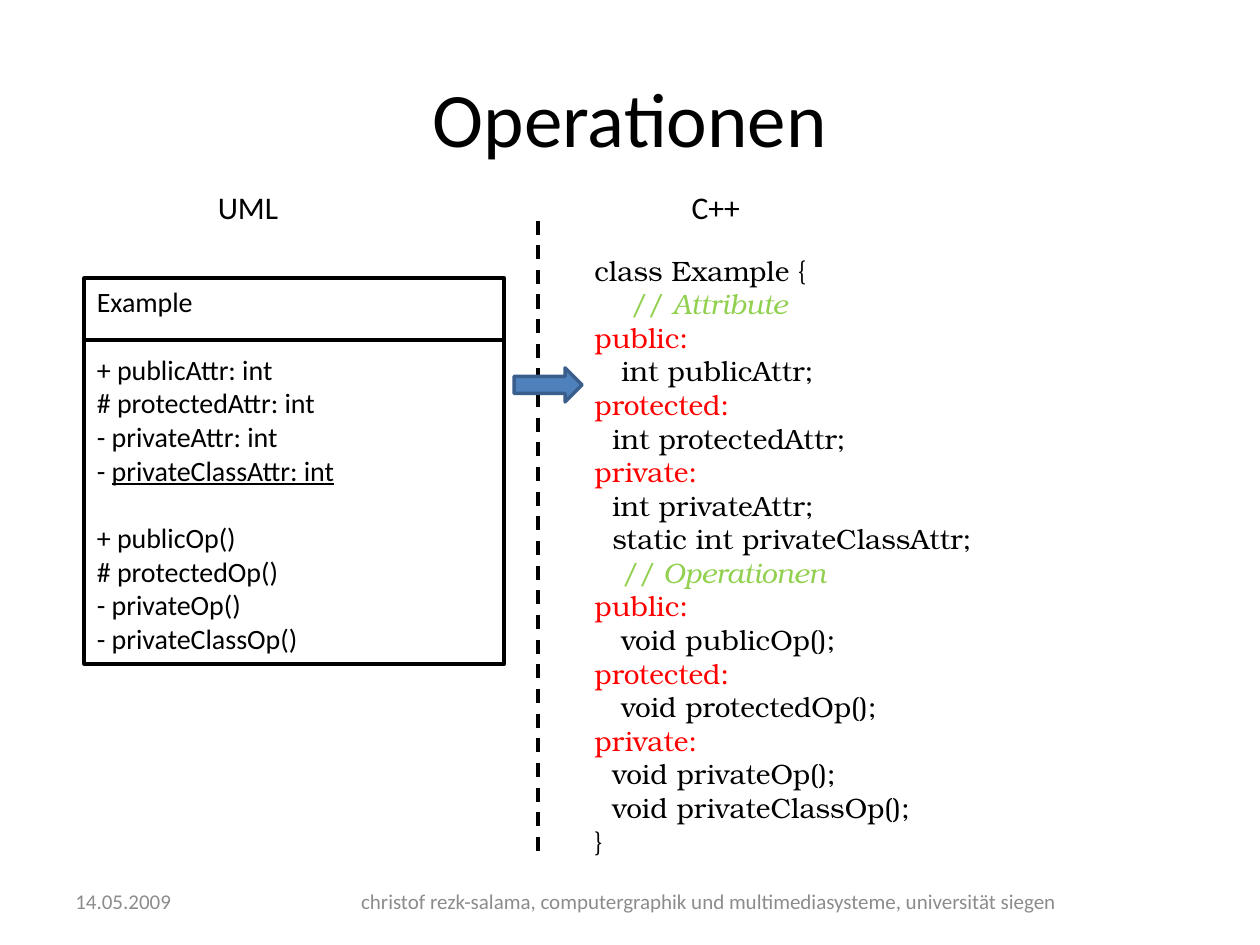
from lxml import etree
from pptx import Presentation, util as u
from pptx.dml.color import RGBColor
from pptx.enum import dml, shapes, text
from pptx.oxml.ns import qn

W, H = 10, 7.5
BLACK = RGBColor(0, 0, 0)
GREY = RGBColor(0x8C, 0x8C, 0x8C)
RED = RGBColor(0xFF, 0, 0)
GREEN = RGBColor(0x92, 0xD0, 0x50)
BLUE = RGBColor(0x4F, 0x81, 0xBD)
NAVY = RGBColor(0x3A, 0x5F, 0x8C)

SANS = {"name": "Calibri", "size": u.Pt(16)}
HEAD = {"name": "Calibri", "size": u.Pt(18)}
FOOT = {"name": "Calibri", "size": u.Pt(12)}
MONO = {"name": "TeX Gyre Bonum", "size": u.Pt(16)}
MID = text.MSO_ANCHOR.MIDDLE
LEFT, CENTER = text.PP_ALIGN.LEFT, text.PP_ALIGN.CENTER
GAP = u.Pt(19.5)  # one line of 16 pt text

# UML compartments: name, attributes, operations
PARTS = [
    ["Example"],
    ["+ publicAttr: int", "# protectedAttr: int", "- privateAttr: int",
     "- _privateClassAttr: int"],
    ["+ publicOp()", "# protectedOp()", "- privateOp()", "- privateClassOp()"],
]

CODE = """class Example {
    // Attribute
public:
   int publicAttr;
protected:
  int protectedAttr;
private:
  int privateAttr;
  static int privateClassAttr;
   // Operationen
public:
   void publicOp();
protected:
   void protectedOp();
private:
  void privateOp();
  void privateClassOp();
}"""


def inch(*vals):
    return [u.Inches(v) for v in vals]


def style(run, fmt, color=BLACK):
    for key, val in fmt.items():
        setattr(run.font, key, val)
    run.font.color.rgb = color


def add_run(para, words, fmt, color=BLACK):
    run = para.add_run()
    run.text = words
    style(run, fmt, color)


def next_para(frame, first):
    para = frame.paragraphs[0] if first else frame.add_paragraph()
    para.alignment = LEFT
    return para


def label(slide, box, words, fmt, color=BLACK, align=LEFT,
          anchor=text.MSO_ANCHOR.TOP, wrap=True):
    frame = slide.shapes.add_textbox(*inch(*box)).text_frame
    frame.word_wrap, frame.vertical_anchor = wrap, anchor
    para = frame.paragraphs[0]
    para.alignment = align
    add_run(para, words, fmt, color)


def rule(slide, start, end, dash=None):
    line = slide.shapes.add_connector(
        shapes.MSO_CONNECTOR.STRAIGHT, *inch(*start, *end))
    line.line.color.rgb, line.line.width = BLACK, u.Pt(2)
    if dash:
        line.line.dash_style = dash
    etree.SubElement(line._element.spPr, qn("a:effectLst"))


def title(slide, box, words):
    head = slide.shapes.title
    head.left, head.top, head.width, head.height = inch(*box)
    head.text_frame.vertical_anchor = MID
    para = head.text_frame.paragraphs[0]
    para.alignment = CENTER
    add_run(para, words, {"name": "Calibri", "size": u.Pt(44)})


def uml(slide, box):
    """Class box with a rule below the class name."""
    x, y, w, h = box
    rect = slide.shapes.add_shape(shapes.MSO_SHAPE.RECTANGLE, *inch(*box))
    rect.shadow.inherit = False
    rect.fill.background()
    rect.line.color.rgb, rect.line.width = BLACK, u.Pt(2.25)
    frame = rect.text_frame
    frame.word_wrap, frame.vertical_anchor = True, text.MSO_ANCHOR.TOP
    for i, part in enumerate(PARTS):
        for j, row in enumerate(part):
            para = next_para(frame, i == 0)
            if i and j == 0:
                para.space_before = GAP
            # an underscore marks a class member, shown underlined
            plain, mark, under = row.partition("_")
            add_run(para, plain, SANS)
            if mark:
                add_run(para, under, {**SANS, "underline": True})
    mid = y + 0.16 * h
    rule(slide, (x, mid), (x + w, mid))


def code(slide, box):
    """Listing with coloured access labels and comments."""
    frame = slide.shapes.add_textbox(*inch(*box)).text_frame
    frame.word_wrap = True
    for i, row in enumerate(CODE.split("\n")):
        para = next_para(frame, i == 0)
        lead, mark, note = row.partition("//")
        add_run(para, lead, MONO, RED if row.endswith(":") else BLACK)
        if mark:
            add_run(para, mark + note, {**MONO, "italic": True}, GREEN)


def arrow(slide, box):
    shape = slide.shapes.add_shape(shapes.MSO_SHAPE.RIGHT_ARROW, *inch(*box))
    shape.shadow.inherit = False
    shape.fill.solid()
    shape.fill.fore_color.rgb = BLUE
    shape.line.color.rgb, shape.line.width = NAVY, u.Pt(2)


def footer(slide, box):
    x, y, w, h = box
    label(slide, (x, y, 0.23 * w, h), "14.05.2009", FOOT, GREY, anchor=MID)
    label(slide, (x + 2, y, w - 2, h),
          "christof rezk-salama, computergraphik und multimediasysteme, "
          "universität siegen", FOOT, GREY, CENTER, MID)


def main():
    deck = Presentation()
    deck.slide_width, deck.slide_height = inch(W, H)
    slide = deck.slides.add_slide(deck.slide_layouts[5])
    edge, split = 0.05 * W, 4.27

    title(slide, (edge, 0.04 * H, W - 2 * edge, H / 6), "Operationen")
    footer(slide, (edge, 6.95, 8.25, 0.4))

    # Left: UML, right: C++
    uml(slide, (0.67, 2.21, W / 3, 3.06))
    rule(slide, (split, 1.75), (split, 0.9 * H), dml.MSO_LINE.DASH)
    for x, w, words in ((1.63, 0.69, "UML"), (5.39, 0.59, "C++")):
        label(slide, (x, 1.44, w, 0.4), words, HEAD, wrap=False)
    code(slide, (4.62, 1.96, 5.04, 4.95))
    arrow(slide, (4.08, 2.92, 0.54, 0.27))

    deck.save("out.pptx")


if __name__ == "__main__":
    main()
